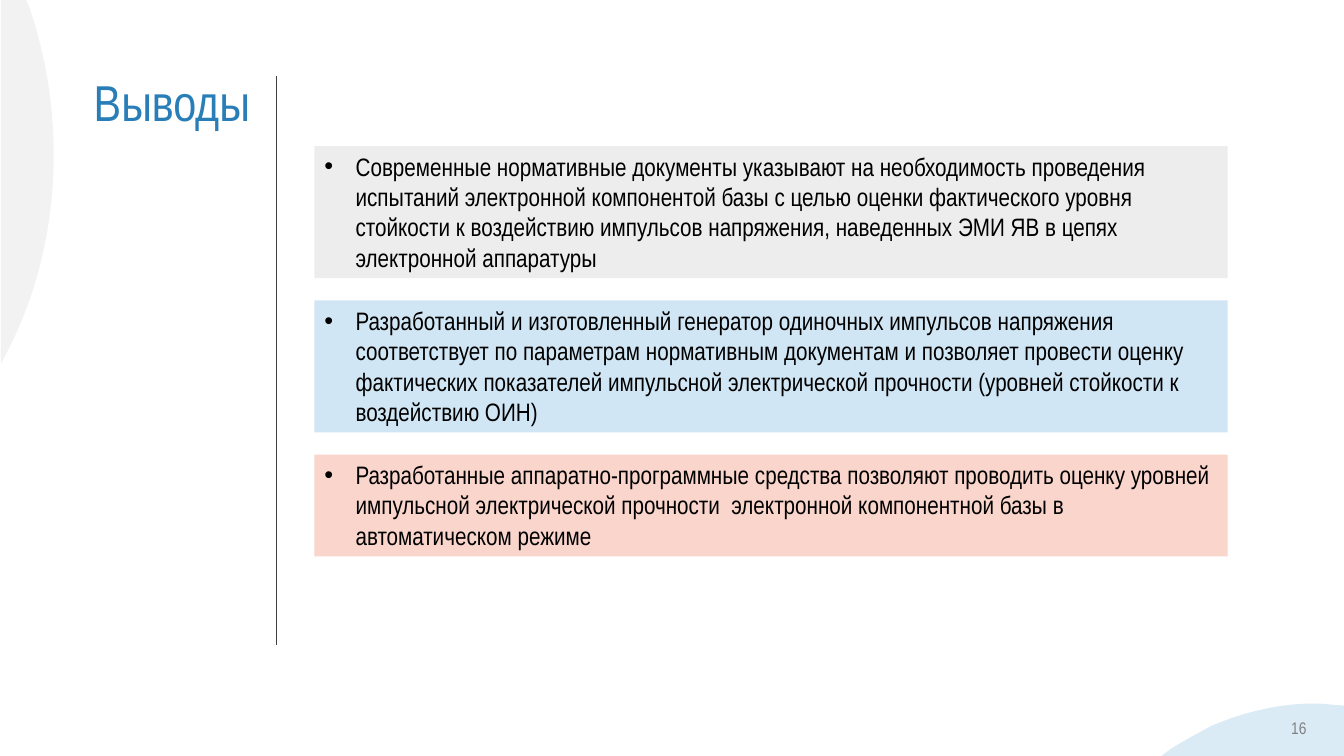
"""Build the conclusions slide on a grid of tenth-inch columns and rows."""
from dataclasses import dataclass
from typing import Any

from lxml.etree import SubElement
from pptx import Presentation
from pptx.dml.color import RGBColor as Rgb
from pptx.enum.shapes import MSO_CONNECTOR as Conn, MSO_SHAPE as Form
from pptx.enum.text import MSO_ANCHOR as Anchor, MSO_AUTO_SIZE as Fit, PP_ALIGN as Align
from pptx.oxml.ns import qn
from pptx.util import Emu, Inches, Pt

Point = tuple[float, float]


@dataclass(frozen=True)
class Theme:
    face: str = "Arial Narrow"
    title: str = "2A7EB8"
    text: str = "000000"
    number: str = "808080"
    rule: str = "404040"
    left: str = "F2F2F2"
    right: str = "DAEBF6"
    big: int = 36
    body: int = 18
    small: int = 12


@dataclass(frozen=True)
class Note:
    fill: str
    lines: int
    text: str


@dataclass(frozen=True)
class Blob:
    fill: str
    start: Point
    steps: tuple[tuple[Point, ...], ...]


THEME = Theme()
COLS, ROWS = 133.33, 75
NOTE_LEFT, NOTE_TOP, NOTE_WIDTH = 31.2, 14.5, 90.6
LINE, PAD, GAP, INDENT = 3, 1.1, 2.2, 3.1
RULE_COL, RULE_TOP, RULE_END = 27.4, 7.5, 64

NOTES = (
    Note("EDEDED", 4, "Современные нормативные документы указывают на необходимость проведения "
         "испытаний электронной компонентой базы с целью оценки фактического уровня стойкости "
         "к воздействию импульсов напряжения, наведенных ЭМИ ЯВ в цепях электронной аппаратуры"),
    Note("D1E6F4", 4, "Разработанный и изготовленный генератор одиночных импульсов напряжения "
         "соответствует по параметрам нормативным документам и позволяет провести оценку "
         "фактических показателей импульсной электрической прочности "
         "(уровней стойкости к воздействию ОИН)"),
    Note("F9D5CC", 3, "Разработанные аппаратно-программные средства позволяют проводить оценку "
         "уровней импульсной электрической прочности  электронной компонентной базы "
         "в автоматическом режиме"),
)

BLOBS = (
    Blob(THEME.left, (0.1, 0), (
        ((2.6, 0),), ((2.8, 0.4),),
        ((6.1, 9.8), (6.2, 20.2), (3, 29.6)),
        ((2.3, 31.5), (1.5, 33.5), (0.5, 35.3)),
        ((0.1, 36.1),))),
    Blob(THEME.right, (129.8, 69.8), (
        ((130.6, 69.8), (131.3, 69.8), (132, 69.9)),
        ((COLS, 70),), ((COLS, ROWS),), ((115.2, ROWS),), ((116.3, 74.2),),
        ((117.6, 73.4), (118.9, 72.7), (120.2, 72)),
        ((123.3, 70.7), (126.5, 69.9), (129.8, 69.8)))),
)


def cell(count: float) -> Emu:
    """Turn grid cells into a length."""
    return Inches(count / 10)


def apply(item: Any, **values: Any) -> None:
    """Set each named attribute on an item."""
    for name, value in values.items():
        setattr(item, name, value)


def place(item: Any, left: float, top: float, width: float, height: float) -> None:
    """Put an item at a place on the grid."""
    apply(item, left=cell(left), top=cell(top), width=cell(width), height=cell(height))


def paint(shape: Any, color: str) -> None:
    """Give a shape a plain fill with no line or shadow."""
    shape.fill.solid()
    shape.fill.fore_color.rgb = Rgb.from_string(color)
    shape.line.fill.background()
    shape.shadow.inherit = False


def write(shape: Any, text: str, size: int, color: str, align: Align = Align.LEFT,
          **frame: Any) -> Any:
    """Write one styled paragraph and return it."""
    apply(shape.text_frame, word_wrap=True, **frame)
    para = shape.text_frame.paragraphs[0]
    para.alignment = align
    run = para.add_run()
    run.text = text
    apply(run.font, name=THEME.face, size=Pt(size))
    run.font.color.rgb = Rgb.from_string(color)
    return para


def trace(start: Point, steps: tuple[tuple[Point, ...], ...], cuts: int = 24) -> list[Point]:
    """List the points along straight and cubic steps."""
    points = [start]
    for step in steps:
        if len(step) == 1:
            points.append(step[0])
            continue
        knots = (points[-1], *step)
        for cut in range(1, cuts + 1):
            t = cut / cuts
            parts = ((1 - t) ** 3, 3 * t * (1 - t) ** 2, 3 * t * t * (1 - t), t ** 3)
            x, y = (sum(p * k[axis] for p, k in zip(parts, knots)) for axis in (0, 1))
            points.append((x, y))
    return points


def add_blob(slide: Any, blob: Blob) -> None:
    """Draw a curved corner shape."""
    first, *rest = [(cell(x), cell(y)) for x, y in trace(blob.start, blob.steps)]
    pen = slide.shapes.build_freeform(*first)
    pen.add_line_segments(rest, close=True)
    paint(pen.convert_to_shape(), blob.fill)


def add_note(slide: Any, note: Note, top: float) -> float:
    """Draw a bulleted box and return the top of the next one."""
    height = note.lines * LINE + PAD
    box = slide.shapes.add_shape(Form.RECTANGLE, 0, 0, 0, 0)
    place(box, NOTE_LEFT, top, NOTE_WIDTH, height)
    paint(box, note.fill)
    para = write(box, note.text, THEME.body, THEME.text,
                 vertical_anchor=Anchor.TOP, auto_size=Fit.SHAPE_TO_FIT_TEXT)
    props = para._p.get_or_add_pPr()
    props.set("marL", str(cell(INDENT)))
    props.set("indent", str(-cell(INDENT)))
    SubElement(props, qn("a:buFont"), typeface="Arial")
    SubElement(props, qn("a:buChar"), char="•")
    return top + height + GAP


def add_rule(slide: Any) -> None:
    """Draw the upright line beside the title."""
    rule = slide.shapes.add_connector(
        Conn.STRAIGHT, cell(RULE_COL), cell(RULE_TOP), cell(RULE_COL), cell(RULE_END))
    rule.line.width = Pt(0.5)
    rule.line.color.rgb = Rgb.from_string(THEME.rule)
    SubElement(rule._element.spPr, qn("a:effectLst"))


def main() -> None:
    """Build and save the slide."""
    deck = Presentation()
    apply(deck, slide_width=cell(COLS), slide_height=cell(ROWS))
    slide = deck.slides.add_slide(deck.slide_layouts[5])
    for blob in BLOBS:
        add_blob(slide, blob)

    title = slide.shapes.title
    place(title, 9.3, 5.8, 18.1, 9.3)
    head = write(title, "Выводы", THEME.big, THEME.title, auto_size=Fit.NONE,
                 vertical_anchor=Anchor.MIDDLE, margin_left=0, margin_right=cell(1))
    head.line_spacing = 0.9

    number = slide.shapes.add_textbox(0, 0, 0, 0)
    place(number, 122.8, 70.2, 6.8, 4)
    write(number, "16", THEME.small, THEME.number, Align.RIGHT,
          vertical_anchor=Anchor.MIDDLE, margin_right=0)

    add_rule(slide)
    top = NOTE_TOP
    for note in NOTES:
        top = add_note(slide, note, top)
    deck.save("out.pptx")


if __name__ == "__main__":
    main()
